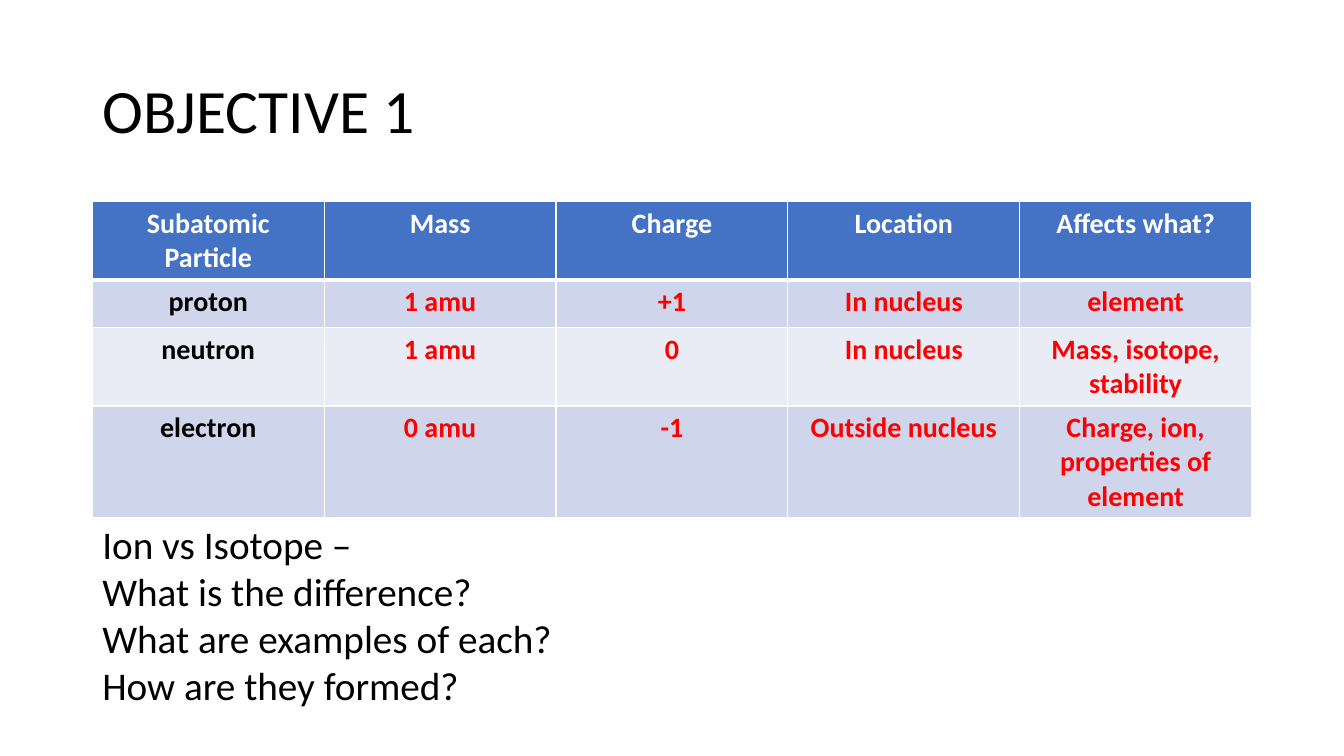
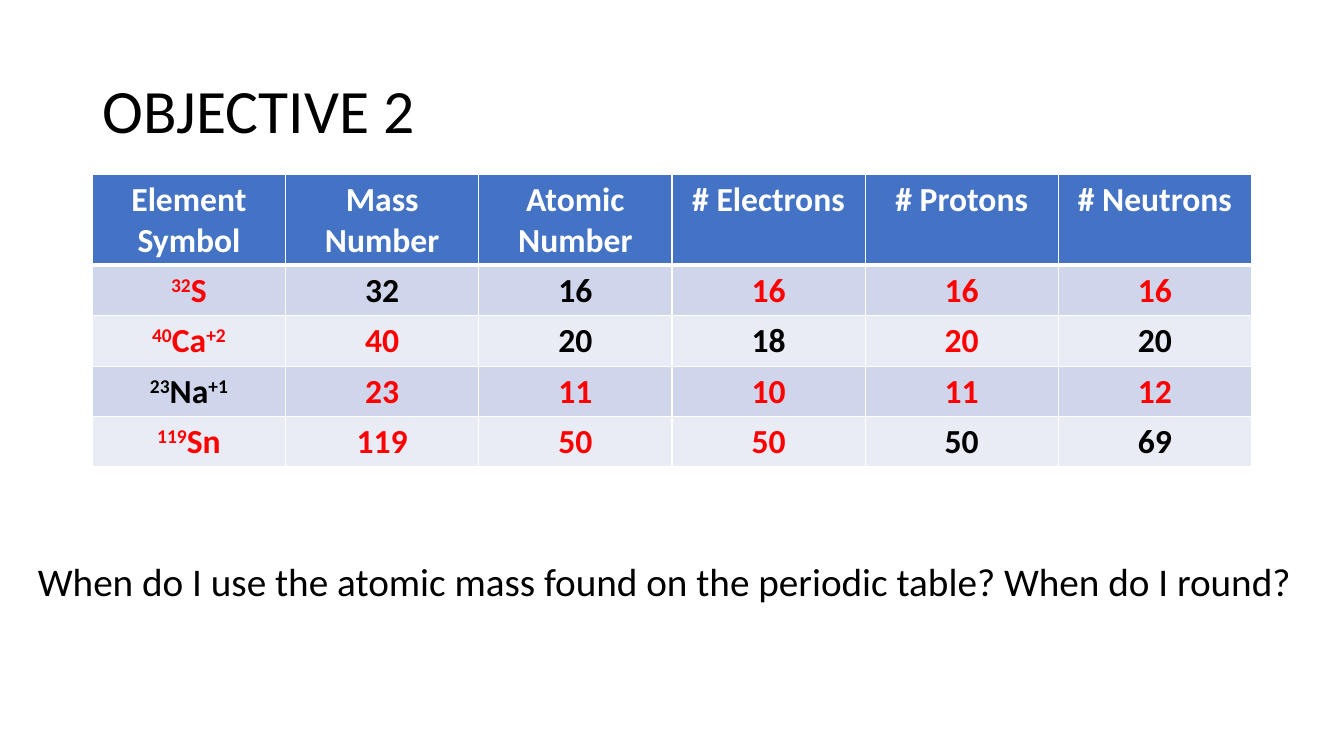
"""Build two chemistry objective slides, each with a title, a table and questions."""
from lxml import etree
from pptx import Presentation
from pptx.dml.color import RGBColor
from pptx.enum import text
from pptx.oxml import ns
from pptx.util import Pt

BLACK, WHITE, RED, BLUE = "000000", "FFFFFF", "FF0000", "4472C4"
BANDS = ["E9EBF5", "CFD5EA"]
RED_MARK, SUPER_MARK = "*", "^"
LEFT, WIDTH = 66, 828


def add_run(p, words, color, **fmt):
    r = p.add_run()
    r.text = words
    r.font.color.rgb = RGBColor.from_string(color)
    for name, value in {"name": "Calibri", **fmt}.items():
        setattr(r.font, name, value)
    return r


def add_text(slide, box, lines, size, anchor, spacing):
    tf = slide.shapes.add_textbox(*map(Pt, box)).text_frame
    tf.word_wrap = True
    tf.vertical_anchor = anchor
    for i, line in enumerate(lines):
        p = tf.add_paragraph() if i else tf.paragraphs[0]
        p.line_spacing = spacing
        add_run(p, line, BLACK, size=Pt(size))


slides = [
    {
        "title": "OBJECTIVE 1",
        "top": 144,
        "size": 20,
        "heights": [56, 34, 56, 80],
        "rows": [
            ["Subatomic Particle", "Mass", "Charge", "Location", "Affects what?"],
            ["proton", "*1 amu", "*+1", "*In nucleus", "*element"],
            ["neutron", "*1 amu", "*0", "*In nucleus", "*Mass, isotope, stability"],
            ["electron", "*0 amu", "*-1", "*Outside nucleus",
             "*Charge, ion, properties of element"],
        ],
        "box": (LEFT, 368, 782, 143),
        "questions": ["Ion vs Isotope –", "What is the difference?",
                      "What are examples of each?", "How are they formed?"],
    },
    {
        "title": "OBJECTIVE 2",
        "top": 124.5,
        "size": 24,
        "heights": [65, 36, 36, 36, 36],
        "rows": [
            ["Element Symbol", "Mass Number", "Atomic Number",
             "# Electrons", "# Protons", "# Neutrons"],
            ["*^32^S", "32", "16", "*16", "*16", "*16"],
            ["*^40^Ca^+2", "*40", "20", "18", "*20", "20"],
            ["^23^Na^+1", "*23", "*11", "*10", "*11", "*12"],
            ["*^119^Sn", "*119", "*50", "*50", "50", "69"],
        ],
        "box": (20, 394.5, 920, 41),
        "questions": ["When do I use the atomic mass found on the periodic table? "
                      "When do I round?"],
    },
]

prs = Presentation()
prs.slide_width, prs.slide_height = Pt(960), Pt(540)

for content in slides:
    slide = prs.slides.add_slide(prs.slide_layouts[6])
    add_text(slide, (LEFT, 29, WIDTH, 104), [content["title"]], 44,
             text.MSO_ANCHOR.MIDDLE, 0.9)

    rows, heights = content["rows"], content["heights"]
    columns = len(rows[0])
    table = slide.shapes.add_table(
        len(rows), columns, Pt(LEFT), Pt(content["top"]), Pt(WIDTH), Pt(sum(heights))).table
    for column in table.columns:
        column.width = Pt(WIDTH / columns)
    for i, (row, height) in enumerate(zip(rows, heights)):
        table.rows[i].height = Pt(height)
        for j, value in enumerate(row):
            cell = table.cell(i, j)
            tcPr = cell._tc.get_or_add_tcPr()
            borders = {"L": 1, "R": 1, "T": 3 if i == 1 else 1, "B": 3 if i == 0 else 1}
            for side, weight in borders.items():
                ln = etree.SubElement(tcPr, ns.qn(f"a:ln{side}"), w=str(Pt(weight)))
                fill = etree.SubElement(ln, ns.qn("a:solidFill"))
                etree.SubElement(fill, ns.qn("a:srgbClr"), val=WHITE)
            cell.fill.solid()
            cell.fill.fore_color.rgb = RGBColor.from_string(BANDS[i % 2] if i else BLUE)

            color = WHITE if i == 0 else RED if value.startswith(RED_MARK) else BLACK
            p = cell.text_frame.paragraphs[0]
            p.alignment = text.PP_ALIGN.CENTER
            for k, part in enumerate(value.removeprefix(RED_MARK).split(SUPER_MARK)):
                if part:
                    r = add_run(p, part, color, size=Pt(content["size"]), bold=True)
                    if k % 2:
                        r._r.get_or_add_rPr().set("baseline", "30000")

    add_text(slide, content["box"], content["questions"], 28, text.MSO_ANCHOR.TOP, 1.0)

prs.save("out.pptx")
